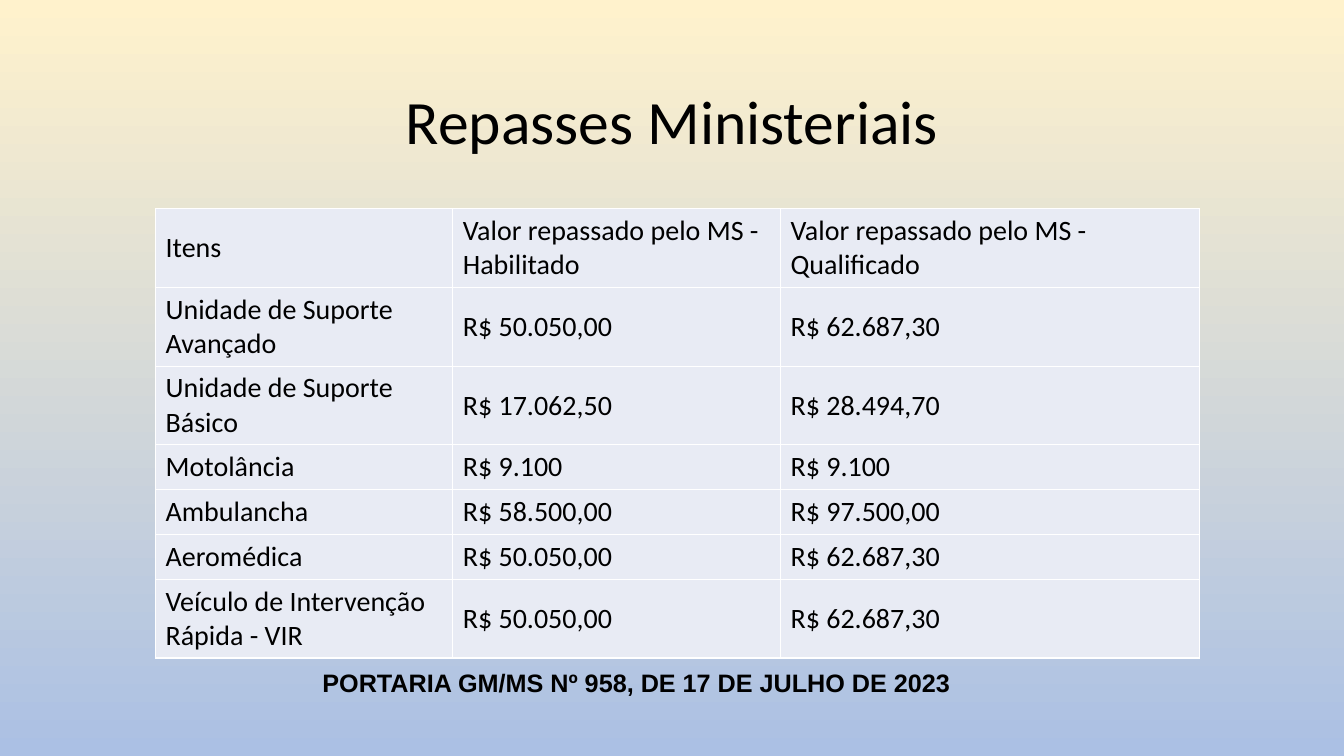
from dataclasses import dataclass

from lxml.etree import SubElement
from pptx import Presentation
from pptx.dml.color import RGBColor
from pptx.enum.text import MSO_ANCHOR, PP_ALIGN
from pptx.oxml.ns import qn
from pptx.util import Cm, Pt

TITLE = "Repasses Ministeriais"
ROWS = [
    ("Itens", "Valor repassado pelo MS - Habilitado", "Valor repassado pelo MS - Qualificado"),
    ("Unidade de Suporte Avançado", "R$ 50.050,00", "R$ 62.687,30"),
    ("Unidade de Suporte Básico", "R$ 17.062,50", "R$ 28.494,70"),
    ("Motolância", "R$ 9.100", "R$ 9.100"),
    ("Ambulancha", "R$ 58.500,00", "R$ 97.500,00"),
    ("Aeromédica", "R$ 50.050,00", "R$ 62.687,30"),
    ("Veículo de Intervenção Rápida - VIR", "R$ 50.050,00", "R$ 62.687,30"),
]
SOURCE = "PORTARIA GM/MS Nº 958, DE 17 DE JULHO DE 2023"

COL_WIDTHS = (7.49, 8.26, 10.56)
SINGLE_ROW, DOUBLE_ROW = 1.13, 1.98
ONE_LINE_ITEMS = ("Motolância", "Ambulancha", "Aeromédica")


@dataclass(frozen=True)
class Theme:
    """Colours, fonts and type sizes of the slide."""
    top: str = "FFF2CC"
    bottom: str = "ABC0E4"
    cell: str = "E8EBF4"
    border: str = "FFFFFF"
    text: str = "000000"
    font: str = "Calibri"
    source_font: str = "Arial"
    title_size: int = 44
    cell_size: int = 20
    source_size: int = 18
    border_width: float = 0.96


THEME = Theme()


def rgb(value):
    """Turn a hex string into a colour."""
    return RGBColor.from_string(value)


def write(tf, text, size, font=THEME.font, bold=False, align=PP_ALIGN.LEFT):
    """Fill a text frame with one formatted paragraph and return it."""
    tf.text = text
    tf.word_wrap = True
    tf.vertical_anchor = MSO_ANCHOR.MIDDLE
    p = tf.paragraphs[0]
    p.alignment = align
    f = p.runs[0].font
    f.name, f.size, f.bold = font, Pt(size), bold
    f.color.rgb = rgb(THEME.text)
    return p


def add_borders(cell):
    """Draw a thin line on the four sides of a cell."""
    tc_pr = cell._tc.get_or_add_tcPr()
    for side in "LRTB":
        ln = SubElement(tc_pr, qn(f"a:ln{side}"), w=str(Pt(THEME.border_width)))
        fill = SubElement(ln, qn("a:solidFill"))
        SubElement(fill, qn("a:srgbClr"), val=THEME.border)


def paint_background(s):
    """Apply the vertical gradient to the slide."""
    fill = s.background.fill
    fill.gradient()
    fill.gradient_angle = 270
    for stop, colour in zip(fill.gradient_stops, (THEME.top, THEME.bottom)):
        stop.color.rgb = rgb(colour)


def add_title(s):
    """Place and format the title."""
    sp = s.shapes.title
    sp.left, sp.top, sp.width, sp.height = Cm(2.64), Cm(1.02), Cm(28.6), Cm(4.24)
    p = write(sp.text_frame, TITLE, THEME.title_size, align=PP_ALIGN.CENTER)
    p.line_spacing = 0.9


def add_values(s):
    """Build the table of transfers."""
    heights = [SINGLE_ROW if row[0] in ONE_LINE_ITEMS else DOUBLE_ROW for row in ROWS]
    table = s.shapes.add_table(
        len(ROWS), len(COL_WIDTHS), Cm(3.92), Cm(5.26),
        Cm(sum(COL_WIDTHS)), Cm(sum(heights))).table
    table.first_row = table.horz_banding = False
    for col, width in zip(table.columns, COL_WIDTHS):
        col.width = Cm(width)
    for row, height, texts in zip(table.rows, heights, ROWS):
        row.height = Cm(height)
        for cell, text in zip(row.cells, texts):
            write(cell.text_frame, text, THEME.cell_size)
            cell.vertical_anchor = MSO_ANCHOR.MIDDLE
            add_borders(cell)
            cell.fill.solid()
            cell.fill.fore_color.rgb = rgb(THEME.cell)


def add_source(s):
    """Place the ordinance reference below the table."""
    sp = s.shapes.add_textbox(Cm(3.71), Cm(16.31), Cm(24.66), Cm(1.73))
    p = write(sp.text_frame, SOURCE, THEME.source_size, THEME.source_font,
              True, PP_ALIGN.CENTER)
    p.line_spacing = 1.07
    p.space_after = Pt(8)


def main():
    """Build and save the slide."""
    prs = Presentation()
    prs.slide_width, prs.slide_height = Cm(33.87), Cm(19.05)
    s = prs.slides.add_slide(prs.slide_layouts[5])
    paint_background(s)
    add_title(s)
    add_values(s)
    add_source(s)
    prs.save("out.pptx")


if __name__ == "__main__":
    main()
